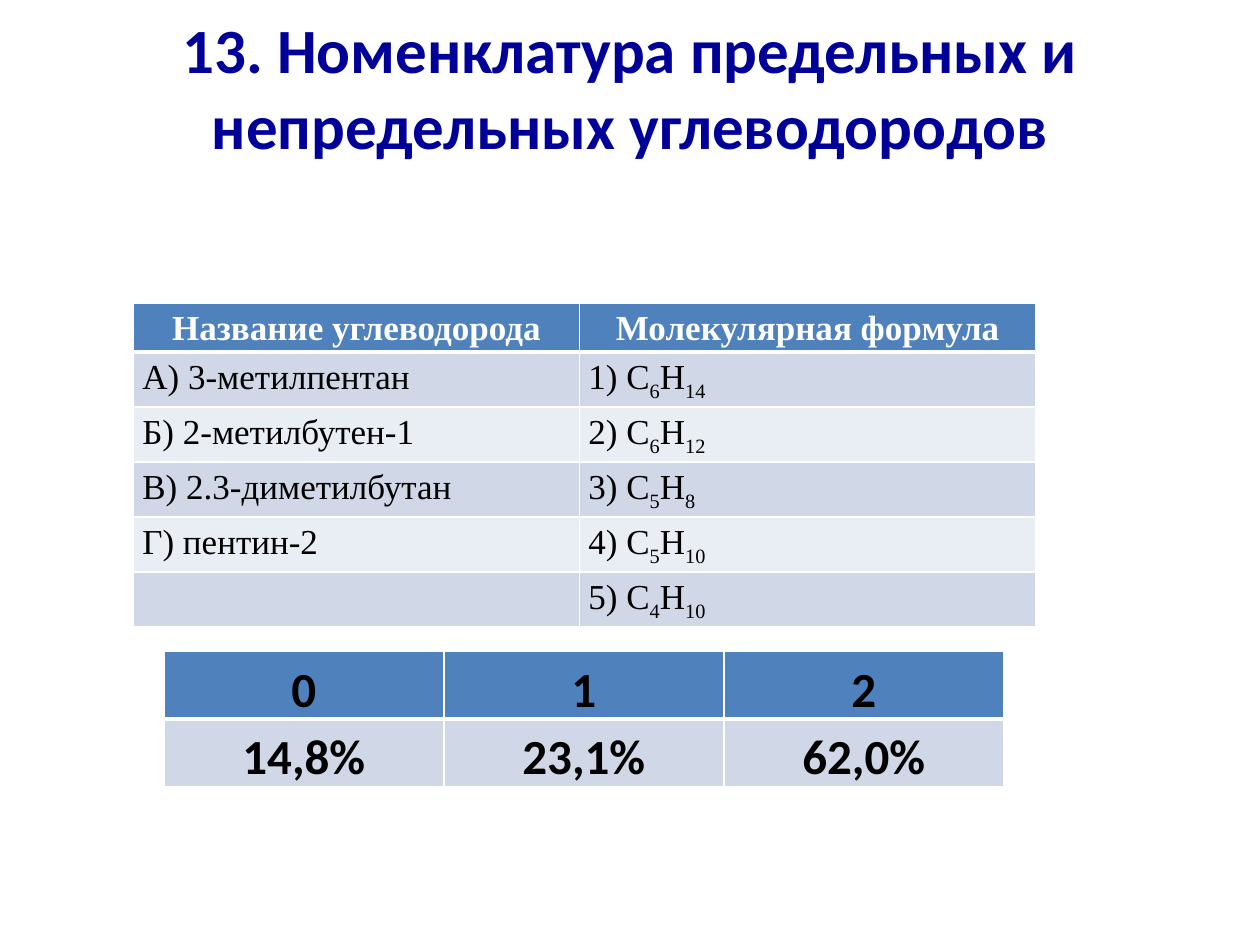
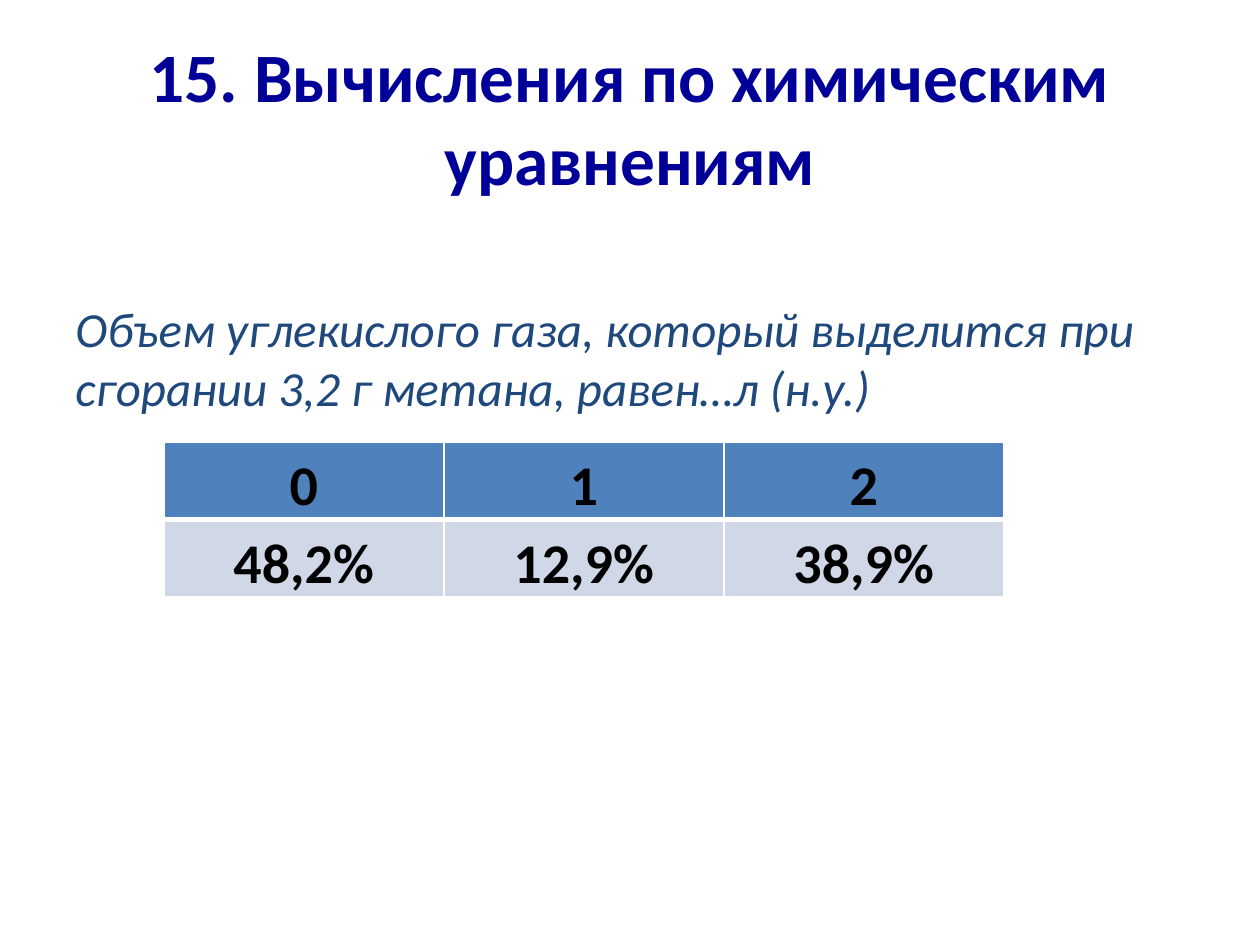
from dataclasses import dataclass

from lxml.etree import SubElement
from pptx import Presentation
from pptx.dml.color import RGBColor
from pptx.enum.text import MSO_ANCHOR as Anchor, PP_ALIGN as Align
from pptx.oxml.ns import qn
from pptx.util import Inches, Pt

# Whole numbers inside a formula are subscripts.
HYDROCARBONS = [
    ("Название углеводорода", "Молекулярная формула"),
    ("А) 3-метилпентан", ("1) С", 6, "Н", 14)),
    ("Б) 2-метилбутен-1", ("2) С", 6, "Н", 12)),
    ("В) 2.3-диметилбутан", ("3) С", 5, "Н", 8)),
    ("Г) пентин-2", ("4) С", 5, "Н", 10)),
    ("", ("5) С", 4, "Н", 10)),
]
SCORES = ("0", "1", "2")
NOMENCLATURE = {
    "title": "13. Номенклатура предельных и непредельных углеводородов",
    "shares": ("14,8%", "23,1%", "62,0%"),
}
CALCULATIONS = {
    "title": "15. Вычисления по химическим уравнениям",
    "question": "Объем углекислого газа, который выделится при сгорании "
                "3,2 г метана, равен…л (н.у.)",
    "shares": ("48,2%", "12,9%", "38,9%"),
}


@dataclass(frozen=True)
class Theme:
    title: str = "000099"
    question: str = "1F497D"
    ink: str = "000000"
    white: str = "FFFFFF"
    header: str = "4F81BD"
    bands: tuple = ("D0D8E8", "E9EDF4")
    sans: str = "Calibri"
    serif: str = "Times New Roman"
    title_size: float = 36
    large_title_size: float = 39.6
    body_size: float = 28
    large_score_size: float = 32
    cell_size: float = 20
    thin: float = 1
    thick: float = 3
    cell_inset: float = 0.07
    cell_spacing: float = 1.15


THEME = Theme()
SLIDE_WIDTH, SLIDE_HEIGHT = 10, 7.5
MARGIN = SLIDE_WIDTH / 20
CONTENT_WIDTH = SLIDE_WIDTH - 2 * MARGIN
TITLE_HEIGHT = SLIDE_HEIGHT / 6
SCORE_LEFT, SCORE_WIDTH = 1.3, SLIDE_WIDTH * 2 / 3


def write_text(frame, content, size, color=THEME.ink, font=THEME.sans, bold=False,
               italic=False, align=Align.LEFT, spacing=None):
    """Fill the first paragraph; whole numbers in a tuple become subscripts."""
    paragraph = frame.paragraphs[0]
    paragraph.alignment = align
    paragraph.line_spacing = spacing
    parts = content if isinstance(content, tuple) else (content,)
    for part in parts:
        if part == "":
            continue
        run = paragraph.add_run()
        run.text = str(part)
        run.font.name, run.font.size = font, Pt(size)
        run.font.bold, run.font.italic = bold, italic
        run.font.color.rgb = RGBColor.from_string(color)
        if isinstance(part, int):
            run._r.get_or_add_rPr().set("baseline", "-25000")


def add_text(slide, content, box, anchor=Anchor.TOP, inset_top=0.05, inset_bottom=0.05,
             **text_format):
    frame = slide.shapes.add_textbox(*map(Inches, box)).text_frame
    frame.word_wrap = True
    frame.vertical_anchor = anchor
    frame.margin_top, frame.margin_bottom = Inches(inset_top), Inches(inset_bottom)
    write_text(frame, content, **text_format)


def add_title(slide, content, top, size, **layout):
    add_text(slide, content, (MARGIN, top, CONTENT_WIDTH, TITLE_HEIGHT), Anchor.MIDDLE,
             size=size, color=THEME.title, bold=True, align=Align.CENTER, **layout)


def add_borders(cell, widths):
    properties = cell._tc.get_or_add_tcPr()
    for side, width in widths.items():
        line = SubElement(properties, qn(f"a:ln{side}"), w=str(Pt(width)))
        fill = SubElement(line, qn("a:solidFill"))
        SubElement(fill, qn("a:srgbClr"), val=THEME.white)


def add_banded_table(slide, rows, left, top, widths, heights, anchor, header_format,
                     body_format):
    """Draw a table with a header, alternating bands and white rules."""
    table = slide.shapes.add_table(
        len(rows), len(widths), Inches(left), Inches(top),
        Inches(sum(widths)), Inches(sum(heights))).table
    for column, width in zip(table.columns, widths):
        column.width = Inches(width)
    for index, (row, height, values) in enumerate(zip(table.rows, heights, rows)):
        row.height = Inches(height)
        color = THEME.bands[(index - 1) % 2] if index else THEME.header
        rules = {"L": THEME.thin, "R": THEME.thin,
                 "T": THEME.thick if index == 1 else THEME.thin,
                 "B": THEME.thin if index else THEME.thick}
        for cell, value in zip(row.cells, values):
            add_borders(cell, rules)
            cell.fill.solid()
            cell.fill.fore_color.rgb = RGBColor.from_string(color)
            cell.vertical_anchor = anchor
            cell.margin_left = cell.margin_right = Inches(THEME.cell_inset)
            cell.margin_top = cell.margin_bottom = 0
            write_text(cell.text_frame, value, spacing=THEME.cell_spacing,
                       **(body_format if index else header_format))


def add_score_table(slide, shares, top, height, size):
    text_format = dict(size=size, bold=True, align=Align.CENTER)
    columns = len(SCORES)
    add_banded_table(slide, (SCORES, shares), SCORE_LEFT, top,
                     [SCORE_WIDTH / columns] * columns, [height / 2] * 2,
                     Anchor.MIDDLE, text_format, text_format)


def build_nomenclature(slide):
    add_title(slide, NOMENCLATURE["title"], 0.36, THEME.title_size, inset_bottom=0.65)
    body_format = dict(size=THEME.cell_size, font=THEME.serif)
    header_format = dict(body_format, color=THEME.white, bold=True, align=Align.CENTER)
    add_banded_table(slide, HYDROCARBONS, 1.06, 2.41, (3.54, 3.62),
                     [0.35] + [0.41] * 4 + [0.43], Anchor.TOP, header_format, body_format)
    add_score_table(slide, NOMENCLATURE["shares"], 5.17, 1.07, THEME.body_size)


def build_calculations(slide):
    add_title(slide, CALCULATIONS["title"], 0.3, THEME.large_title_size)
    add_text(slide, CALCULATIONS["question"], (MARGIN, 1.75, CONTENT_WIDTH, 4.95),
             inset_top=0.62, size=THEME.body_size, color=THEME.question, italic=True)
    add_score_table(slide, CALCULATIONS["shares"], 3.51, 1.23, THEME.large_score_size)


def main():
    presentation = Presentation()
    presentation.slide_width = Inches(SLIDE_WIDTH)
    presentation.slide_height = Inches(SLIDE_HEIGHT)
    blank = presentation.slide_layouts[6]
    for build in (build_nomenclature, build_calculations):
        build(presentation.slides.add_slide(blank))
    presentation.save("out.pptx")


if __name__ == "__main__":
    main()
